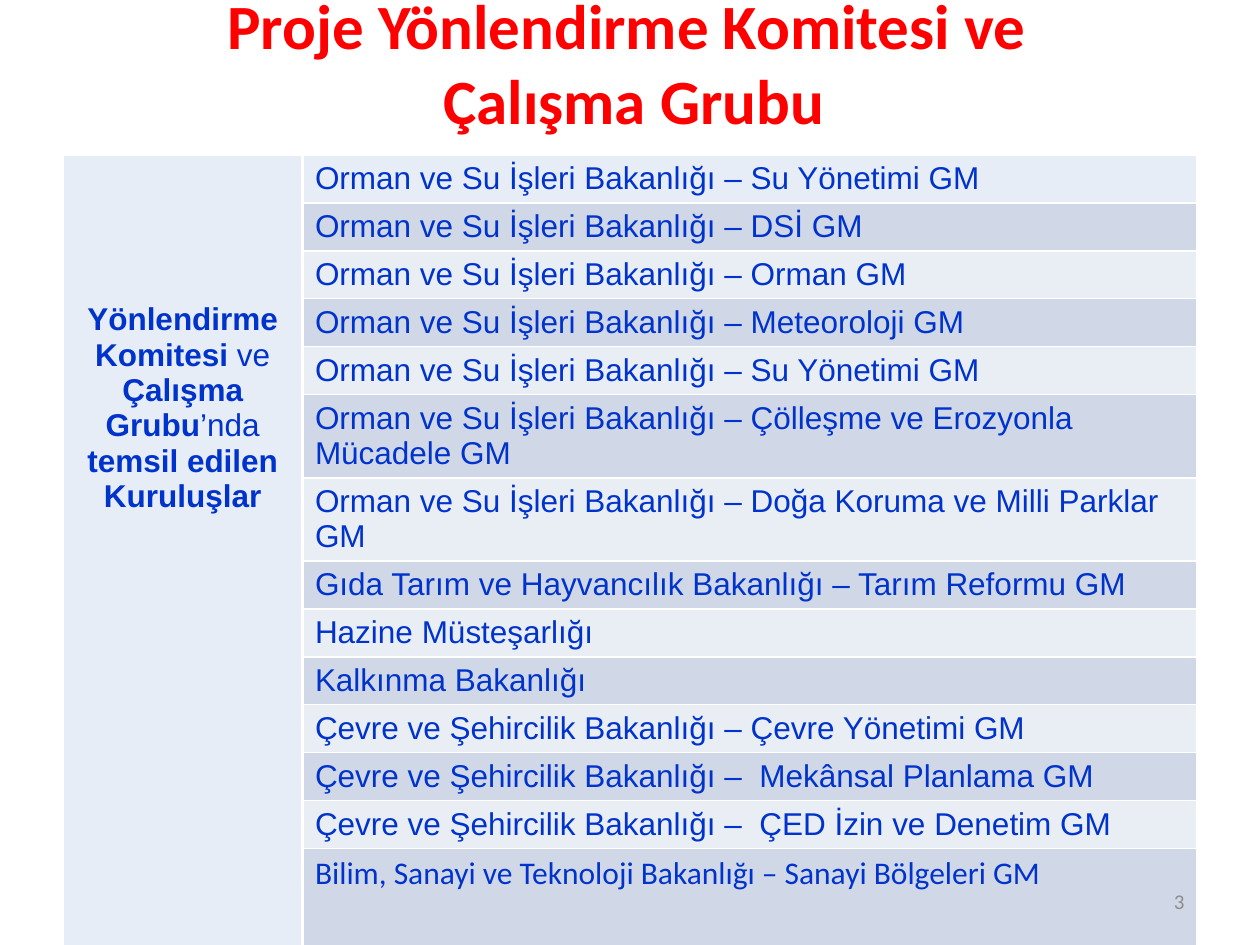
from lxml.etree import SubElement
from pptx import Presentation
from pptx.dml.color import RGBColor
from pptx.enum.text import MSO_ANCHOR, PP_ALIGN
from pptx.oxml.ns import qn
from pptx.util import Inches, Pt

WIDTH, HEIGHT = 10, 7.5
COLORS = {
    "title": "FF0000", "text": "0033CC", "number": "8C8C8C", "border": "FFFFFF",
    "first": "E6EDF6", "odd": "E9EDF4", "even": "D0D8E8",
}
FORESTRY = "Orman ve Su İşleri Bakanlığı – "
ENVIRONMENT = "Çevre ve Şehircilik Bakanlığı – "
MEMBERS = [
    FORESTRY + "Su Yönetimi GM",
    FORESTRY + "DSİ GM",
    FORESTRY + "Orman GM",
    FORESTRY + "Meteoroloji GM",
    FORESTRY + "Su Yönetimi GM",
    FORESTRY + "Çölleşme ve Erozyonla Mücadele GM",
    FORESTRY + "Doğa Koruma ve Milli Parklar GM",
    "Gıda Tarım ve Hayvancılık Bakanlığı – Tarım Reformu GM",
    "Hazine Müsteşarlığı",
    "Kalkınma Bakanlığı",
    ENVIRONMENT + "Çevre Yönetimi GM",
    ENVIRONMENT + " Mekânsal Planlama GM",
    ENVIRONMENT + " ÇED İzin ve Denetim GM",
    "Bilim, Sanayi ve Teknoloji Bakanlığı – Sanayi Bölgeleri GM",
]
HEADING = [
    ("Yönlendirme Komitesi ", True), ("ve ", False), ("Çalışma Grubu", True),
    ("’nda ", False), ("temsil edilen Kuruluşlar", True),
]
ROW, TALL_ROW, LAST_ROW = 0.38, 0.66, 0.77
TALL_ROWS = (5, 6)


def write_text(frame, paragraphs, *, size, color, font="Arial", align=PP_ALIGN.LEFT):
    """Fill a frame with paragraphs, each a list of (text, bold) runs."""
    for index, runs in enumerate(paragraphs):
        paragraph = frame.add_paragraph() if index else frame.paragraphs[0]
        paragraph.alignment = align
        for text, bold in runs:
            run = paragraph.add_run()
            run.text = text
            run.font.name = font
            run.font.size = Pt(size)
            run.font.bold = bold
            run.font.color.rgb = RGBColor.from_string(COLORS[color])


def place(box):
    """Turn a box given as shares of the slide into lengths."""
    return [Inches(share * side) for share, side in zip(box, (WIDTH, HEIGHT) * 2)]


def style_cell(cell, fill, **borders):
    """Give a cell its borders, in points by side, and its fill."""
    properties = cell._tc.get_or_add_tcPr()
    for side in "LRTB":
        line = SubElement(properties, qn(f"a:ln{side}"), w=str(Pt(borders.get(side, 1))))
        color = SubElement(SubElement(line, qn("a:solidFill")), qn("a:srgbClr"))
        color.set("val", COLORS["border"])
    cell.fill.solid()
    cell.fill.fore_color.rgb = RGBColor.from_string(COLORS[fill])


def add_text(slide, box, paragraphs, *, wrap=True, anchor=MSO_ANCHOR.TOP, **text_format):
    """Add a text box in the given box."""
    frame = slide.shapes.add_textbox(*place(box)).text_frame
    frame.word_wrap = wrap
    frame.vertical_anchor = anchor
    write_text(frame, paragraphs, **text_format)


def add_members(slide, box):
    """Add the table of represented institutions."""
    table = slide.shapes.add_table(len(MEMBERS), 2, *place(box)).table
    table.first_row = table.horz_banding = False
    for column, share in zip(table.columns, (0.19 / box[2], 1 - 0.19 / box[2])):
        column.width = Inches(share * box[2] * WIDTH)
    for index, member in enumerate(MEMBERS):
        height = TALL_ROW if index in TALL_ROWS else ROW
        table.rows[index].height = Inches(LAST_ROW if index == len(MEMBERS) - 1 else height)
        fill = ("odd", "even")[index % 2] if index else "first"
        style_cell(table.cell(index, 0), "first", R=2.25, B=3)
        cell = table.cell(index, 1)
        style_cell(cell, fill, L=2.25)
        font = "Calibri" if index == len(MEMBERS) - 1 else "Arial"
        write_text(cell.text_frame, [[(member, False)]], size=18, color="text", font=font)
    heading = table.cell(0, 0)
    heading.merge(table.cell(len(MEMBERS) - 1, 0))
    heading.margin_top = Inches(1.17)
    write_text(heading.text_frame, [HEADING], size=18, color="text", align=PP_ALIGN.CENTER)


def main():
    """Build the committee slide and save it."""
    presentation = Presentation()
    presentation.slide_width, presentation.slide_height = Inches(WIDTH), Inches(HEIGHT)
    slide = presentation.slides.add_slide(presentation.slide_layouts[6])
    add_members(slide, (0.05, 0.164, 0.9, 0.836))
    add_text(slide, (0.717, 0.927, 0.233, 0.053), [[("3", False)]], size=12, color="number",
             font="Calibri", align=PP_ALIGN.RIGHT, anchor=MSO_ANCHOR.MIDDLE)
    title = [[("Proje Yönlendirme Komitesi ve ", True)], [("Çalışma Grubu", True)]]
    add_text(slide, (0.167, -0.021, 0.672, 0.175), title, wrap=False, size=36, color="title",
             font="Calibri", align=PP_ALIGN.CENTER)
    presentation.save("out.pptx")


if __name__ == "__main__":
    main()
